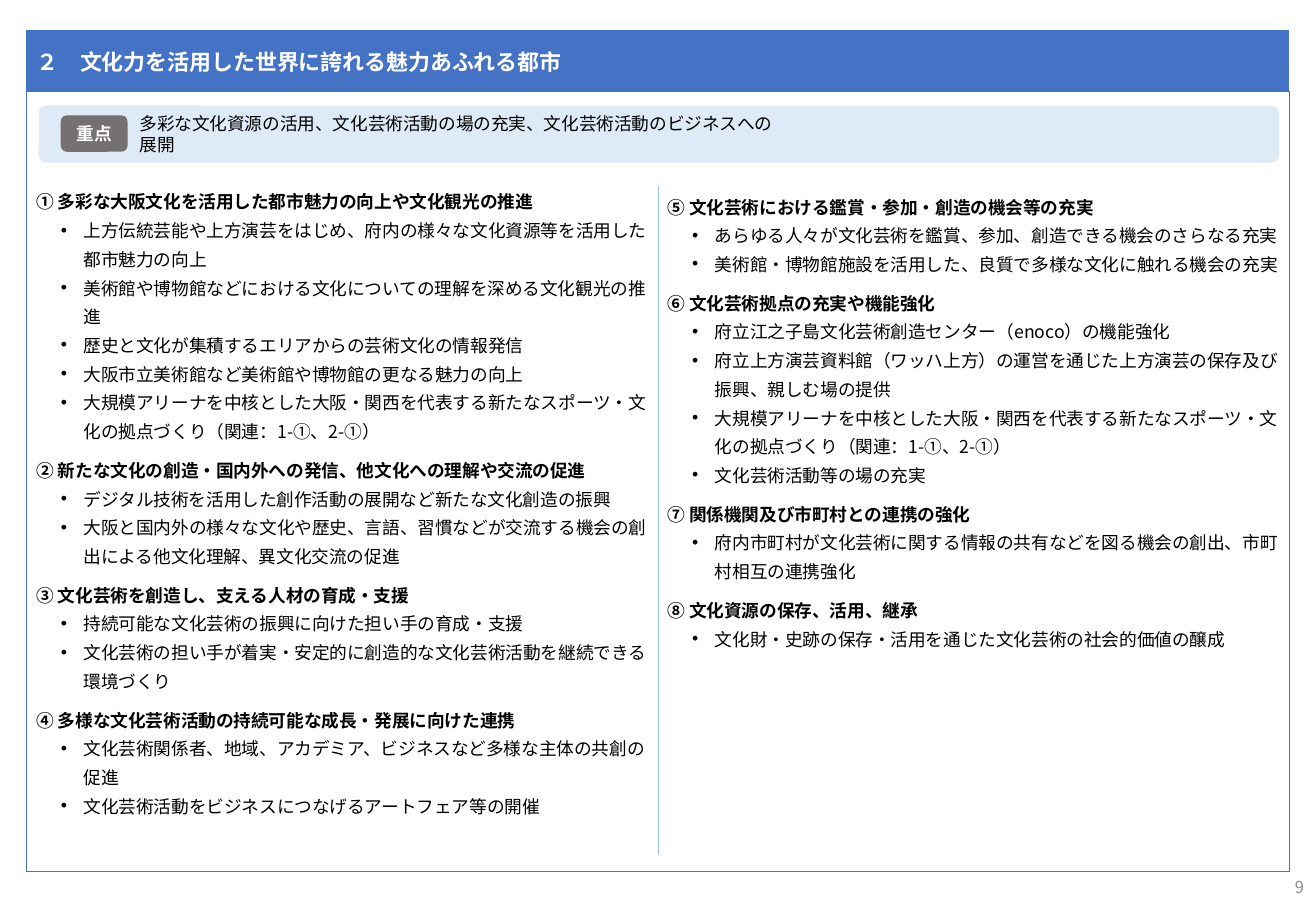
from dataclasses import dataclass

import pptx
import pptx.dml.color
import pptx.enum.shapes
import pptx.enum.text
import pptx.oxml
import pptx.oxml.ns
import pptx.util
from lxml import etree

Pt = pptx.util.Pt
Shape = pptx.enum.shapes.MSO_SHAPE
Align = pptx.enum.text.PP_ALIGN
Anchor = pptx.enum.text.MSO_ANCHOR
qn = pptx.oxml.ns.qn


@dataclass(frozen=True)
class Theme:
    font: str = "Noto Sans CJK JP"
    blue: str = "4472C4"
    divider: str = "9DC3E6"
    band: str = "DEEBF7"
    badge: str = "767171"
    white: str = "FFFFFF"
    black: str = "000000"
    grey: str = "8C8C8C"
    title_size: float = 13
    body_size: float = 10.5
    number_size: float = 9.8


theme = Theme()
color = pptx.dml.color.RGBColor.from_string


def add_run(paragraph, text, size, font_color, bold=False):
    run = paragraph.add_run()
    run.text = text
    run.font.size = Pt(size)
    run.font.bold = bold
    run.font.color.rgb = color(font_color)
    run.font.name = theme.font
    etree.SubElement(run.font._element, qn("a:ea"), typeface=theme.font)


def set_borders(cell, visible_sides):
    """Draw the named sides (from L, R, T, B) and hide the others."""
    properties = cell._tc.get_or_add_tcPr()
    for side in "LRTB":
        line = etree.SubElement(properties, qn(f"a:ln{side}"), w=str(Pt(0.5)))
        if side in visible_sides:
            fill = etree.SubElement(line, qn("a:solidFill"))
            etree.SubElement(fill, qn("a:srgbClr"), val=theme.blue)
        else:
            etree.SubElement(line, qn("a:noFill"))


title = "２\u3000文化力を活用した世界に誇れる魅力あふれる都市".replace("\u3000", "　")
arena = "大規模アリーナを中核とした大阪・関西を代表する新たなスポーツ・文化の拠点づくり（関連：1-①、2-①）"
left_policies = {
    "① 多彩な大阪文化を活用した都市魅力の向上や文化観光の推進": [
        "上方伝統芸能や上方演芸をはじめ、府内の様々な文化資源等を活用した都市魅力の向上",
        "美術館や博物館などにおける文化についての理解を深める文化観光の推進",
        "歴史と文化が集積するエリアからの芸術文化の情報発信",
        "大阪市立美術館など美術館や博物館の更なる魅力の向上",
        arena,
    ],
    "② 新たな文化の創造・国内外への発信、他文化への理解や交流の促進": [
        "デジタル技術を活用した創作活動の展開など新たな文化創造の振興",
        "大阪と国内外の様々な文化や歴史、言語、習慣などが交流する機会の創出による他文化理解、異文化交流の促進",
    ],
    "③ 文化芸術を創造し、支える人材の育成・支援": [
        "持続可能な文化芸術の振興に向けた担い手の育成・支援",
        "文化芸術の担い手が着実・安定的に創造的な文化芸術活動を継続できる環境づくり",
    ],
    "④ 多様な文化芸術活動の持続可能な成長・発展に向けた連携": [
        "文化芸術関係者、地域、アカデミア、ビジネスなど多様な主体の共創の促進",
        "文化芸術活動をビジネスにつなげるアートフェア等の開催",
    ],
}
right_policies = {
    "⑤ 文化芸術における鑑賞・参加・創造の機会等の充実": [
        "あらゆる人々が文化芸術を鑑賞、参加、創造できる機会のさらなる充実",
        "美術館・博物館施設を活用した、良質で多様な文化に触れる機会の充実",
    ],
    "⑥ 文化芸術拠点の充実や機能強化": [
        "府立江之子島文化芸術創造センター（enoco）の機能強化",
        "府立上方演芸資料館（ワッハ上方）の運営を通じた上方演芸の保存及び振興、親しむ場の提供",
        arena,
        "文化芸術活動等の場の充実",
    ],
    "⑦ 関係機関及び市町村との連携の強化": [
        "府内市町村が文化芸術に関する情報の共有などを図る機会の創出、市町村相互の連携強化",
    ],
    "⑧ 文化資源の保存、活用、継承": [
        "文化財・史跡の保存・活用を通じた文化芸術の社会的価値の醸成",
    ],
}

presentation = pptx.Presentation()
presentation.slide_width = Pt(780)
presentation.slide_height = Pt(540)
slide = presentation.slides.add_slide(presentation.slide_layouts[6])

# Framed table: title row above two policy columns
table = slide.shapes.add_table(2, 2, Pt(15.8), Pt(18), Pt(748.4), Pt(498.4)).table
table.first_row = False
table.horz_banding = False
table.rows[0].height = Pt(36)
table.rows[1].height = Pt(462.4)

table.cell(0, 0).merge(table.cell(0, 1))
for column, sides in enumerate(("LT", "RT")):
    header = table.cell(0, column)
    set_borders(header, sides)
    header.fill.solid()
    header.fill.fore_color.rgb = color(theme.blue)
title_cell = table.cell(0, 0)
title_cell.vertical_anchor = Anchor.MIDDLE
title_cell.margin_left = title_cell.margin_right = Pt(5.8)
add_run(title_cell.text_frame.paragraphs[0], title, theme.title_size, theme.white, True)

columns = ((left_policies, "LTB", 14), (right_policies, "RTB", 17))
for column, (policies, sides, first_spacing) in enumerate(columns):
    cell = table.cell(1, column)
    set_borders(cell, sides)
    cell.fill.background()
    cell.margin_left = cell.margin_right = Pt(5.8)
    cell.margin_top = Pt(58.9)
    cell.margin_bottom = Pt(2.9)
    frame = cell.text_frame
    for index, (heading, measures) in enumerate(policies.items()):
        paragraph = frame.add_paragraph() if index else frame.paragraphs[0]
        paragraph.line_spacing = Pt(17 if index else first_spacing)
        paragraph.space_before = Pt(6 if index else 0)
        add_run(paragraph, heading, theme.body_size, theme.black, True)
        for measure in measures:
            paragraph = frame.add_paragraph()
            paragraph.line_spacing = Pt(17)
            properties = paragraph._p.get_or_add_pPr()
            properties.set("marL", str(Pt(28)))
            properties.set("indent", str(Pt(-13.5)))
            etree.SubElement(properties, qn("a:buFont"), typeface="Arial")
            etree.SubElement(properties, qn("a:buChar"), char="•")
            add_run(paragraph, measure, theme.body_size, theme.black)

divider = slide.shapes.add_connector(
    pptx.enum.shapes.MSO_CONNECTOR.STRAIGHT, Pt(390), Pt(110.2), Pt(390), Pt(506.9))
divider.line.color.rgb = color(theme.divider)
divider.line.width = Pt(0.5)
etree.SubElement(divider._element.spPr, qn("a:effectLst"))

# Priority band with its badge
band = slide.shapes.add_shape(Shape.ROUNDED_RECTANGLE, Pt(23), Pt(62.6), Pt(735.1), Pt(33.8))
band.adjustments[0] = 0.13
badge = slide.shapes.add_shape(Shape.ROUNDED_RECTANGLE, Pt(36), Pt(68.4), Pt(39.6), Pt(21.6))
for shape, fill_color in ((band, theme.band), (badge, theme.badge)):
    shape.shadow.inherit = False
    shape.fill.solid()
    shape.fill.fore_color.rgb = color(fill_color)
    shape.line.fill.background()

priority = slide.shapes.add_textbox(Pt(75.6), Pt(64.8), Pt(391), Pt(29.5))
page_number = slide.shapes.add_textbox(Pt(604.4), Pt(511.2), Pt(175.6), Pt(28.8))
labels = (
    (badge, "重点", Align.CENTER, theme.body_size, theme.white, True),
    (priority, "多彩な文化資源の活用、文化芸術活動の場の充実、文化芸術活動のビジネスへの展開",
     Align.LEFT, theme.body_size, theme.black, False),
    (page_number, "9", Align.RIGHT, theme.number_size, theme.grey, False),
)
for shape, text, alignment, size, font_color, bold in labels:
    frame = shape.text_frame
    frame.word_wrap = True
    frame.vertical_anchor = Anchor.MIDDLE
    paragraph = frame.paragraphs[0]
    paragraph.alignment = alignment
    add_run(paragraph, text, size, font_color, bold)

presentation.save("out.pptx")
